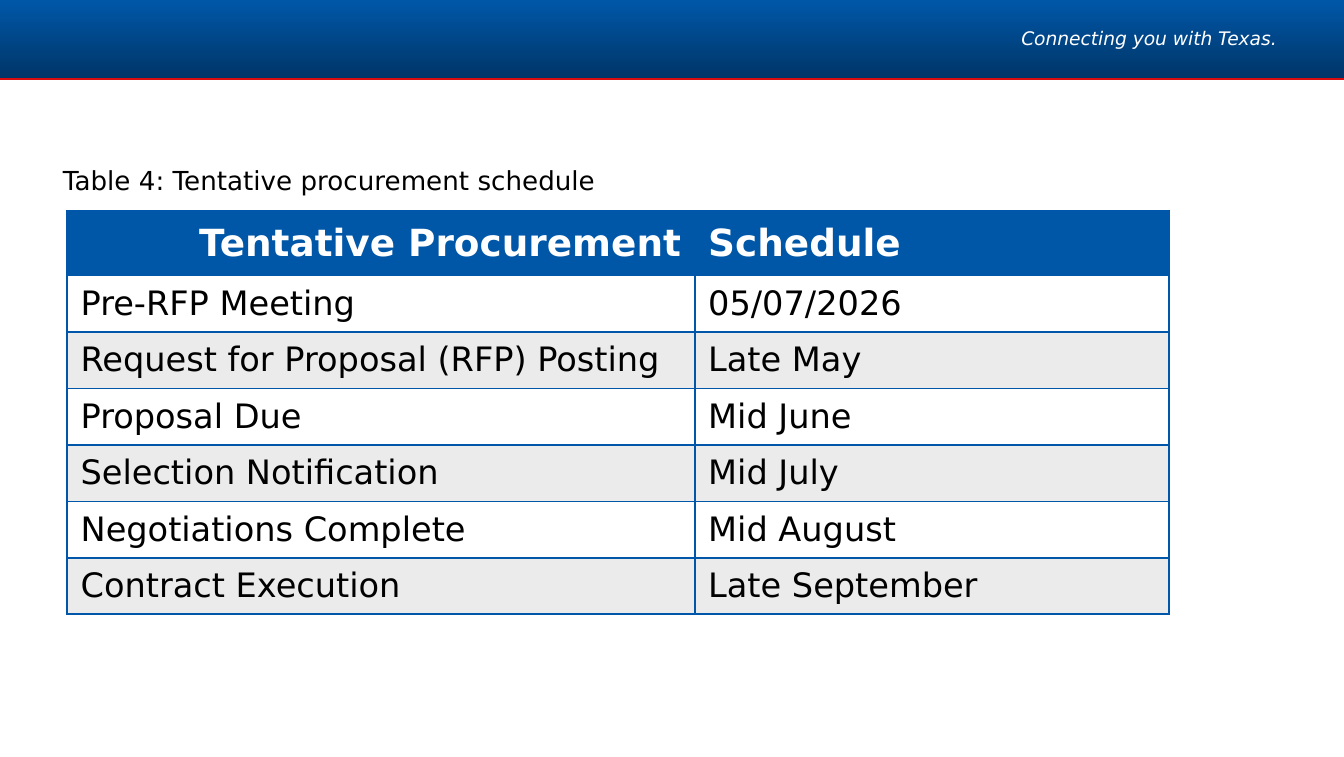
from lxml.etree import SubElement
from pptx import Presentation
from pptx.dml.color import RGBColor
from pptx.enum.shapes import MSO_CONNECTOR, MSO_SHAPE
from pptx.enum.text import MSO_ANCHOR, PP_ALIGN
from pptx.oxml.ns import qn
from pptx.util import Pt

PX = 9144  # 100 px to the inch
FONT = "DejaVu Sans"
HEX = {
    "blue": "0057A8",
    "navy": "003567",
    "red": "D90D0D",
    "edge": "0056A9",
    "band": "EBEBEB",
    "white": "FFFFFF",
    "black": "000000",
}
ROWS = [
    ("Tentative Procurement", "Schedule"),
    ("Pre-RFP Meeting", "05/07/2026"),
    ("Request for Proposal (RFP) Posting", "Late May"),
    ("Proposal Due", "Mid June"),
    ("Selection Notification", "Mid July"),
    ("Negotiations Complete", "Mid August"),
    ("Contract Execution", "Late September"),
]


def rgb(name):
    return RGBColor.from_string(HEX[name])


def emu(*box):
    return [n * PX for n in box]


def write(frame, text, size, color, bold=False, italic=False, align=PP_ALIGN.LEFT):
    para = frame.paragraphs[0]
    para.text = text
    para.alignment = align
    font = para.font
    font.name, font.size = FONT, Pt(size)
    font.bold, font.italic = bold, italic
    font.color.rgb = rgb(color)
    return para


def add_text(slide, box, inset=0):
    frame = slide.shapes.add_textbox(*emu(*box)).text_frame
    frame.margin_left = frame.margin_right = inset * PX
    frame.margin_top = frame.margin_bottom = inset * PX // 2
    frame.vertical_anchor = MSO_ANCHOR.MIDDLE
    return frame


def add_banner(slide, box):
    x, y, w, h = box
    bar = slide.shapes.add_shape(MSO_SHAPE.RECTANGLE, *emu(*box))
    bar.shadow.inherit = False
    bar.line.fill.background()
    bar.fill.gradient()
    bar.fill.gradient_angle = 270
    for stop, name in zip(bar.fill.gradient_stops, ("blue", "navy")):
        stop.color.rgb = rgb(name)

    rule = slide.shapes.add_connector(
        MSO_CONNECTOR.STRAIGHT, *emu(x, y + h, x + w, y + h))
    rule.line.color.rgb = rgb("red")
    rule.line.width = Pt(1)
    SubElement(rule._element.spPr, qn("a:effectLst"))

    frame = add_text(slide, (x + w - 283, y, 233, h))
    motto = write(frame, "Connecting you with Texas.", 10, "white",
                  italic=True, align=PP_ALIGN.RIGHT)
    motto.line_spacing = 0.9


def add_edges(cell):
    """Draw a thin line on all four sides; must run before the cell is filled."""
    props = cell._tc.get_or_add_tcPr()
    for side in ("lnL", "lnR", "lnT", "lnB"):
        line = SubElement(props, qn(f"a:{side}"), w=str(Pt(1)))
        fill = SubElement(line, qn("a:solidFill"))
        SubElement(fill, qn("a:srgbClr"), val=HEX["edge"])


def add_plan(slide, box):
    x, y, w, h = box
    head, left = 48, 467
    table = slide.shapes.add_table(len(ROWS), 2, *emu(*box)).table
    for col, width in zip(table.columns, (left, w - left)):
        col.width = width * PX
    table.rows[0].height = head * PX
    for row in list(table.rows)[1:]:
        row.height = (h - head) * PX // (len(ROWS) - 1)

    for r, texts in enumerate(ROWS):
        top = r == 0
        shade = "blue" if top else "white" if r % 2 else "band"
        for c, text in enumerate(texts):
            cell = table.cell(r, c)
            add_edges(cell)
            cell.fill.solid()
            cell.fill.fore_color.rgb = rgb(shade)
            cell.vertical_anchor = MSO_ANCHOR.MIDDLE
            align = PP_ALIGN.RIGHT if top and c == 0 else PP_ALIGN.LEFT
            write(cell.text_frame, text, 20 if top else 18,
                  "white" if top else "black", bold=top, align=align)


def main():
    deck = Presentation()
    deck.slide_width, deck.slide_height = emu(1000, 563)
    slide = deck.slides.add_slide(deck.slide_layouts[6])
    add_banner(slide, (0, 0, 1000, 59))
    caption = add_text(slide, (37, 117, 423, 34), inset=10)
    write(caption, "Table 4: Tentative procurement schedule", 14, "black")
    caption.word_wrap = False
    add_plan(slide, (50, 157, 820, 300))
    deck.save("out.pptx")


if __name__ == "__main__":
    main()
